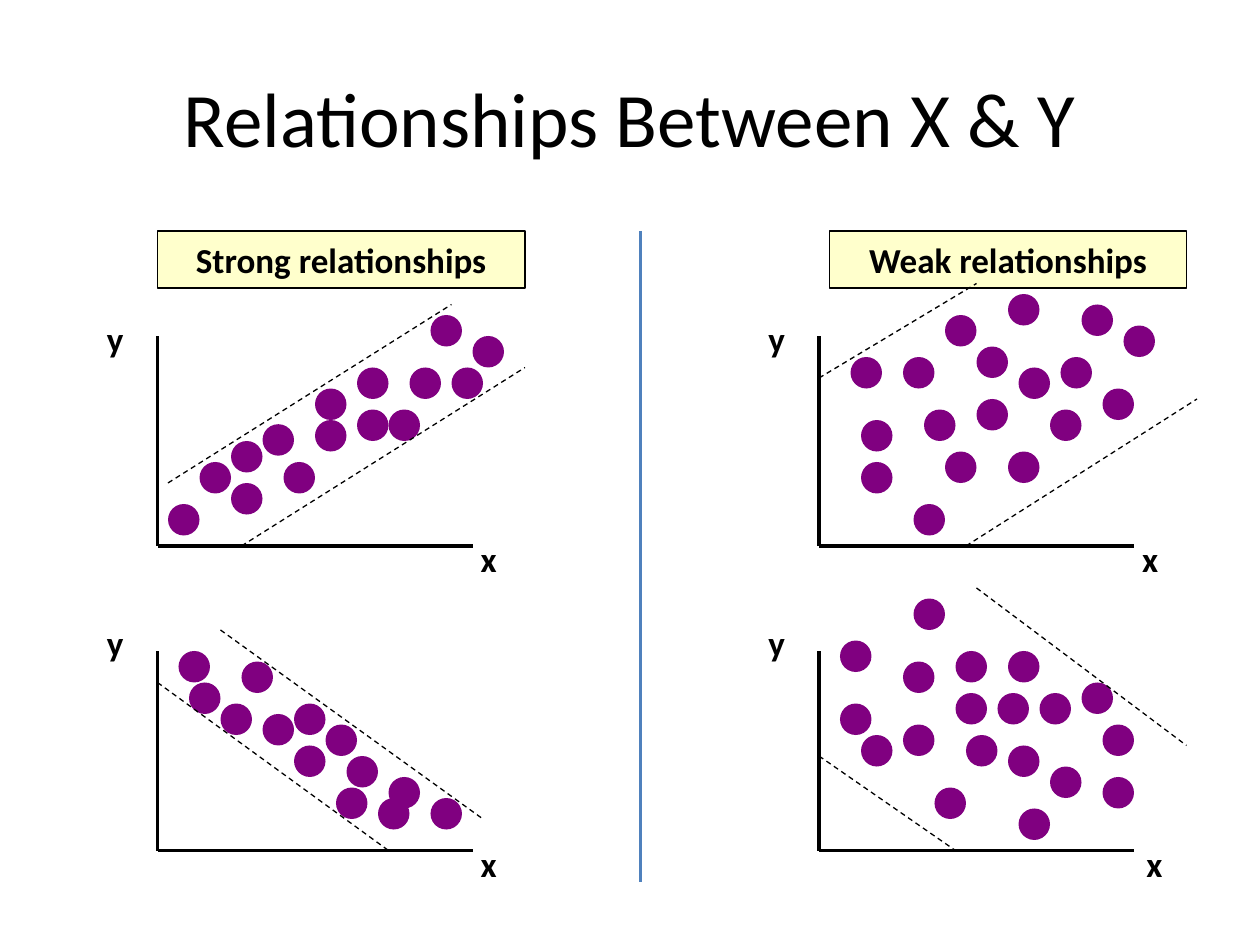
from lxml.etree import SubElement
from pptx import Presentation
from pptx.dml.color import RGBColor
from pptx.enum.dml import MSO_LINE_DASH_STYLE as Dash
from pptx.enum.shapes import MSO_CONNECTOR as Connector, MSO_SHAPE as Shape
from pptx.enum.text import MSO_ANCHOR as Anchor, PP_ALIGN as Align
from pptx.oxml.ns import qn
from pptx.util import Cm, Pt

THEME = {
    "font": "Calibri",
    "ink": RGBColor(0x00, 0x00, 0x00),
    "label_fill": RGBColor(0xFF, 0xFF, 0xCC),
    "divider": RGBColor(0x4F, 0x81, 0xBD),
    "dot": RGBColor(0x80, 0x00, 0x80),
    "title_size": 44,
    "label_size": 20,
}

# Places and sizes are in grid steps, twelve to the inch
STEP_CM = 2.54 / 12
TITLE = ("Relationships Between X & Y", (6, 3.6, 108, 15))
HEADINGS = [
    ("Strong relationships", (15, 22, 35, 5.4)),
    ("Weak relationships", (79, 22, 34, 5.4)),
]
DIVIDER = ((61, 22), (61, 84))
AXIS_WIDTH = 30
DOT_SIZE = 3
LETTER_SIZE = (4.3, 5.2)
LETTER_Y = (-6, 22.4)

# Dots (lower left corner) and bands are counted right and up from the origin
PLOTS = [
    {   # strong, rising
        "origin": (15, 52), "height": 20, "letter_x": (29.6, 1.4),
        "bands": [((1, 6), (28, 23)), ((8, 0), (35, 17))],
        "dots": [(1, 1), (4, 5), (26, 19), (28, 14), (7, 3), (30, 17), (19, 10),
                 (19, 14), (24, 14), (15, 12), (7, 7), (10, 8.6), (22, 10),
                 (15, 9), (12, 5)],
    },
    {   # strong, falling
        "origin": (15, 81), "height": 19, "letter_x": (29.6, 1.4),
        "bands": [((6, 21), (31, 3)), ((0, 16), (22, 0))],
        "dots": [(21, 2), (3, 13), (26, 2), (8, 15), (18, 6), (22, 4), (13, 11),
                 (2, 16), (6, 11), (10, 10), (17, 3), (16, 9), (13, 7)],
    },
    {   # weak, rising
        "origin": (78, 52), "height": 20, "letter_x": (29.6, 1.4),
        "bands": [((0, 16), (15, 25)), ((14, 0), (36, 14))],
        "dots": [(15, 16), (4, 5), (18, 6), (23, 15), (8, 15), (9, 1), (12, 6),
                 (19, 14), (12, 19), (4, 9), (3, 15), (10, 10), (22, 10),
                 (15, 11), (18, 21), (29, 18), (27, 12), (25, 20)],
    },
    {   # weak, falling
        "origin": (78, 81), "height": 19, "letter_x": (30, 1.4),
        "bands": [((15, 25), (35, 10)), ((0, 9), (13, 0))],
        "dots": [(9, 21), (2, 11), (2, 17), (8, 9), (19, 1), (4, 8), (13, 16),
                 (18, 7), (17, 12), (13, 12), (8, 15), (21, 12), (14, 8),
                 (11, 3), (22, 5), (27, 9), (25, 13), (27, 4), (18, 16)],
    },
]


def steps(*counts):
    return [Cm(count * STEP_CM) for count in counts]


def write(box, text, size, align, bold=False, wrap=True):
    frame = box.text_frame
    frame.word_wrap = wrap
    frame.text = text
    para = frame.paragraphs[0]
    para.alignment = align
    span = para.runs[0]
    span.font.name = THEME["font"]
    span.font.size = Pt(size)
    span.font.bold = bold
    span.font.color.rgb = THEME["ink"]


def draw_line(shapes, start, end, width, color=THEME["ink"], dash=None):
    line = shapes.add_connector(Connector.STRAIGHT, *steps(*start, *end))
    line.line.width = Pt(width)
    line.line.color.rgb = color
    if dash:
        line.line.dash_style = dash
    SubElement(line._element.spPr, qn("a:effectLst"))


def draw_plot(shapes, plot):
    origin_x, origin_y = plot["origin"]

    def place(point):
        return origin_x + point[0], origin_y - point[1]

    # Axes and their letters
    for end in ((0, plot["height"]), (AXIS_WIDTH, 0)):
        draw_line(shapes, place((0, 0)), place(end), 2)
    for letter, corner in (("y", LETTER_Y), ("x", plot["letter_x"])):
        box = shapes.add_textbox(*steps(*place(corner), *LETTER_SIZE))
        write(box, letter, THEME["label_size"], Align.LEFT, bold=True, wrap=False)

    # Dots
    for right, up in plot["dots"]:
        corner = place((right, up + DOT_SIZE))
        dot = shapes.add_shape(Shape.OVAL, *steps(*corner, DOT_SIZE, DOT_SIZE))
        dot.shadow.inherit = False
        dot.fill.solid()
        dot.fill.fore_color.rgb = THEME["dot"]
        dot.line.fill.background()

    # Dashed band around the dots
    for start, end in plot["bands"]:
        draw_line(shapes, place(start), place(end), 0.75, dash=Dash.DASH)


def main():
    deck = Presentation()
    deck.slide_width, deck.slide_height = steps(120, 90)
    page = deck.slides.add_slide(deck.slide_layouts[6])

    # Title
    text, area = TITLE
    box = page.shapes.add_textbox(*steps(*area))
    write(box, text, THEME["title_size"], Align.CENTER)
    box.text_frame.vertical_anchor = Anchor.MIDDLE

    # Column headings
    for text, area in HEADINGS:
        box = page.shapes.add_shape(Shape.RECTANGLE, *steps(*area))
        box.shadow.inherit = False
        box.fill.solid()
        box.fill.fore_color.rgb = THEME["label_fill"]
        box.line.color.rgb = THEME["ink"]
        box.line.width = Pt(1)
        write(box, text, THEME["label_size"], Align.CENTER, bold=True)

    # Divider and scatter plots
    draw_line(page.shapes, *DIVIDER, 2.25, THEME["divider"])
    for plot in PLOTS:
        draw_plot(page.shapes.add_group_shape().shapes, plot)

    deck.save("out.pptx")


if __name__ == "__main__":
    main()
